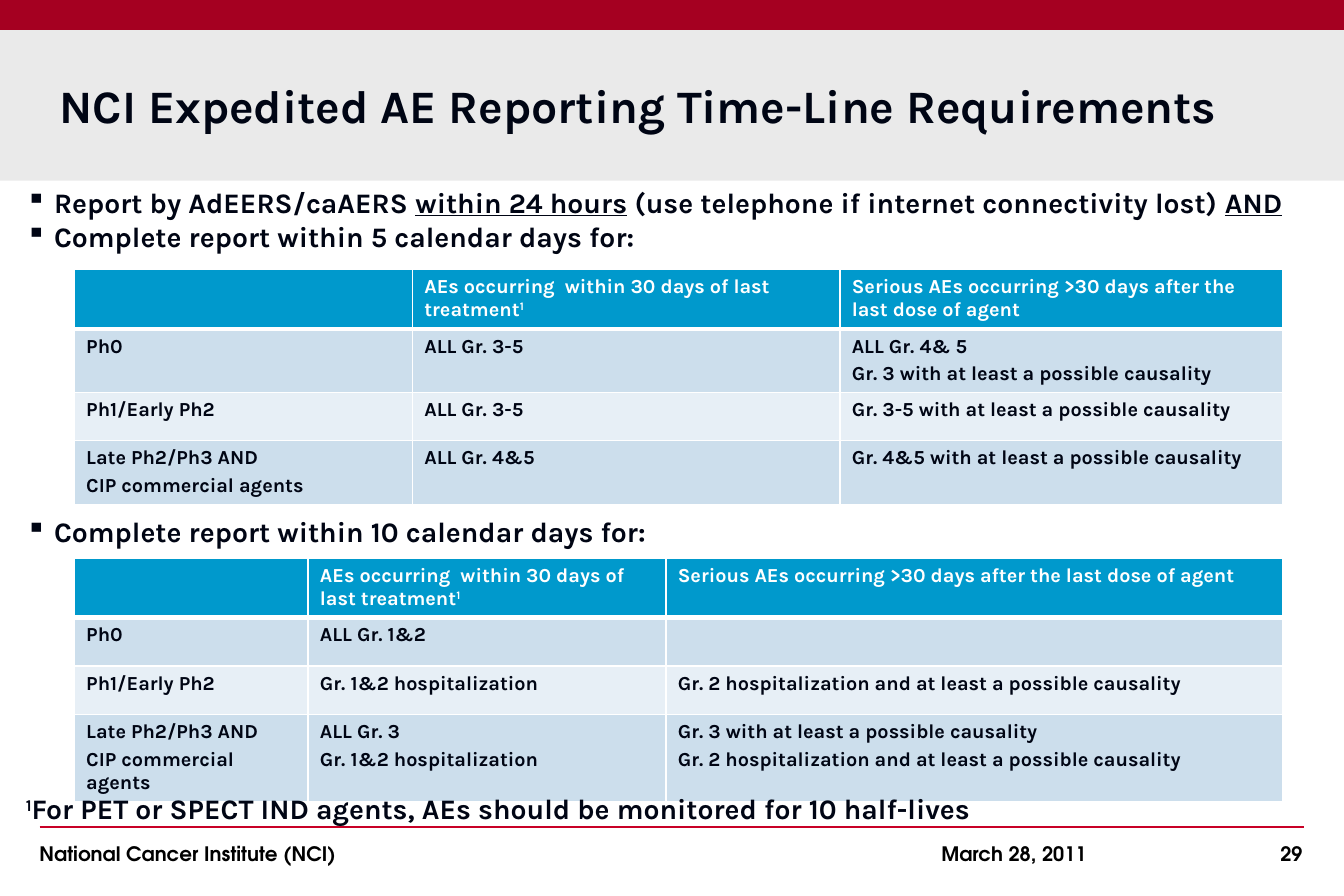
from dataclasses import dataclass

from lxml.etree import SubElement
from pptx import Presentation
from pptx.dml.color import RGBColor
from pptx.enum.shapes import MSO_CONNECTOR as Connector, MSO_SHAPE as Shape
from pptx.enum.text import MSO_ANCHOR as Anchor, PP_ALIGN as Align
from pptx.oxml import parse_xml
from pptx.oxml.ns import nsdecls, qn
from pptx.util import Cm, Pt


@dataclass(frozen=True)
class Theme:
    ink: str = "000514"
    black: str = "000000"
    white: str = "FFFFFF"
    crimson: str = "A50021"
    rule: str = "C80026"
    title_band: str = "EAEAEA"
    header: str = "0099CC"
    bands: tuple = ("CCDEEC", "E7EFF6")
    font: str = "Karla"
    footer_font: str = "TeX Gyre Adventor"
    title_size: float = 28
    body_size: float = 17
    small_size: float = 12


SUPER, UNDERLINE = "super", "underline"


def write(frame, paragraphs, font, size, color, align=Align.LEFT, before=0, bullet=None):
    """Fill a text frame; a paragraph is a string or a list of strings and (text, mark) pairs."""
    frame.word_wrap = True
    for index, content in enumerate(paragraphs):
        para = frame.add_paragraph() if index else frame.paragraphs[0]
        para.alignment = align
        para.space_before = Pt(before)
        if bullet:
            properties = para._p.get_or_add_pPr()
            properties.set("marL", str(Cm(0.6)))
            properties.set("indent", str(-Cm(0.6)))
            SubElement(properties, qn("a:buChar")).set("char", bullet)
        for part in [content] if isinstance(content, str) else content:
            text, mark = (part, None) if isinstance(part, str) else part
            span = para.add_run()
            span.text = text
            span.font.name = font
            span.font.size = Pt(size)
            span.font.bold = True
            span.font.color.rgb = RGBColor.from_string(color)
            if mark == UNDERLINE:
                span.font.underline = True
            elif mark == SUPER:
                span._r.get_or_add_rPr().set("baseline", "30000")


class SlideBuilder:
    def __init__(self, slide, theme):
        self.shapes = slide.shapes
        self.theme = theme

    def band(self, top, height, color):
        """Add a filled bar across the whole slide."""
        band = self.shapes.add_shape(Shape.RECTANGLE, 0, Cm(top), Cm(28.58), Cm(height))
        band.shadow.inherit = False
        band.fill.solid()
        band.fill.fore_color.rgb = RGBColor.from_string(color)
        band.line.fill.background()
        return band

    def title(self, text):
        frame = self.band(0.64, 3.2, self.theme.title_band).text_frame
        frame.margin_left = Cm(1.27)
        frame.vertical_anchor = Anchor.MIDDLE
        write(frame, [text], self.theme.font, self.theme.title_size, self.theme.ink)

    def box(self, left, top, width, height):
        return self.shapes.add_textbox(Cm(left), Cm(top), Cm(width), Cm(height)).text_frame

    def body(self, top, width, height, paragraphs, bullet="▪"):
        write(self.box(0.3, top, width, height), paragraphs, self.theme.font,
              self.theme.body_size, self.theme.ink, bullet=bullet)

    def footer(self, left, width, text, align=Align.LEFT):
        frame = self.box(left, 17.78, width, 0.76)
        frame.margin_left = frame.margin_right = 0
        write(frame, [text], self.theme.footer_font, self.theme.small_size,
              self.theme.black, align=align)

    def rule(self, left, right, height):
        rule = self.shapes.add_connector(
            Connector.STRAIGHT, Cm(left), Cm(height), Cm(right), Cm(height))
        rule.line.color.rgb = RGBColor.from_string(self.theme.rule)
        rule.line.width = Pt(1)
        SubElement(rule._element.spPr, qn("a:effectLst"))

    def cell(self, cell, paragraphs, fill, color, bottom):
        cell.fill.solid()
        cell.fill.fore_color.rgb = RGBColor.from_string(fill)
        properties = cell._tc.get_or_add_tcPr()
        for index, (side, width) in enumerate(zip("LRTB", (1, 1, 1, bottom))):
            properties.insert(index, parse_xml(
                f'<a:ln{side} {nsdecls("a")} w="{Pt(width)}"><a:solidFill>'
                f'<a:srgbClr val="{self.theme.white}"/></a:solidFill></a:ln{side}>'))
        write(cell.text_frame, paragraphs, self.theme.font, self.theme.small_size,
              color, before=2.4)

    def table(self, top, widths, heights, rows):
        """Add a table whose cells are lists of paragraphs; the first row is the header."""
        table = self.shapes.add_table(len(rows), len(widths), Cm(1.58), Cm(top),
                                      Cm(sum(widths)), Cm(sum(heights))).table
        table.horz_banding = False
        for column, width in zip(table.columns, widths):
            column.width = Cm(width)
        for index, (row, height, contents) in enumerate(zip(table.rows, heights, rows)):
            row.height = Cm(height)
            if index == 0:
                fill, color, bottom = self.theme.header, self.theme.white, 3
            else:
                fill, color, bottom = self.theme.bands[(index - 1) % 2], self.theme.ink, 1
            for cell, paragraphs in zip(row.cells, contents):
                self.cell(cell, paragraphs, fill, color, bottom)


HEADINGS = [
    [],
    [["AEs occurring  within 30 days of last treatment", ("1", SUPER)]],
    ["Serious AEs occurring >30 days after the last dose of agent"],
]
PHASES = [["Ph0"], ["Ph1/Early Ph2"], ["Late Ph2/Ph3 AND", "CIP commercial agents"]]
FIVE_DAYS = [
    (["ALL Gr. 3-5"], ["ALL Gr. 4& 5", "Gr. 3 with at least a possible causality"]),
    (["ALL Gr. 3-5"], ["Gr. 3-5 with at least a possible causality"]),
    (["ALL Gr. 4&5"], ["Gr. 4&5 with at least a possible causality"]),
]
TEN_DAYS = [
    (["ALL Gr. 1&2"], []),
    (["Gr. 1&2 hospitalization"], ["Gr. 2 hospitalization and at least a possible causality"]),
    (["ALL Gr. 3", "Gr. 1&2 hospitalization"],
     ["Gr. 3 with at least a possible causality",
      "Gr. 2 hospitalization and at least a possible causality"]),
]


def with_labels(requirements):
    """Put the headings above and the phases beside the requirements."""
    return [HEADINGS] + [[phase, *cells] for phase, cells in zip(PHASES, requirements)]


def main():
    deck = Presentation()
    deck.slide_width, deck.slide_height = Cm(28.58), Cm(19.05)
    theme = Theme()
    page = SlideBuilder(deck.slides.add_slide(deck.slide_layouts[6]), theme)

    page.band(0, 0.64, theme.crimson)
    page.footer(0.84, 12, "National Cancer Institute (NCI)")
    page.footer(20.02, 5, "March 28, 2011")
    page.footer(25.5, 2.2, "29", align=Align.RIGHT)
    page.rule(0.84, 27.74, 17.58)

    page.title("NCI Expedited AE Reporting Time-Line Requirements")
    page.table(5.72, (7.19, 9.09, 9.42), (1.27, 1.35, 1.02, 1.32), with_labels(FIVE_DAYS))
    page.body(3.81, 27.74, 1.7, [
        ["Report by AdEERS/caAERS ", ("within 24 hours", UNDERLINE),
         " (use telephone if internet connectivity lost) ", ("AND", UNDERLINE)],
        "Complete report within 5 calendar days for:",
    ])
    page.body(10.8, 15.67, 0.99, ["Complete report within 10 calendar days for:"])
    page.table(11.86, (4.97, 7.61, 13.12), (1.24, 1.03, 1.03, 1.85), with_labels(TEN_DAYS))
    page.body(16.71, 23.06, 0.99, [
        [("1", SUPER), "For PET or SPECT IND agents, AEs should be monitored for 10 half-lives"],
    ], bullet=None)
    deck.save("out.pptx")


if __name__ == "__main__":
    main()
